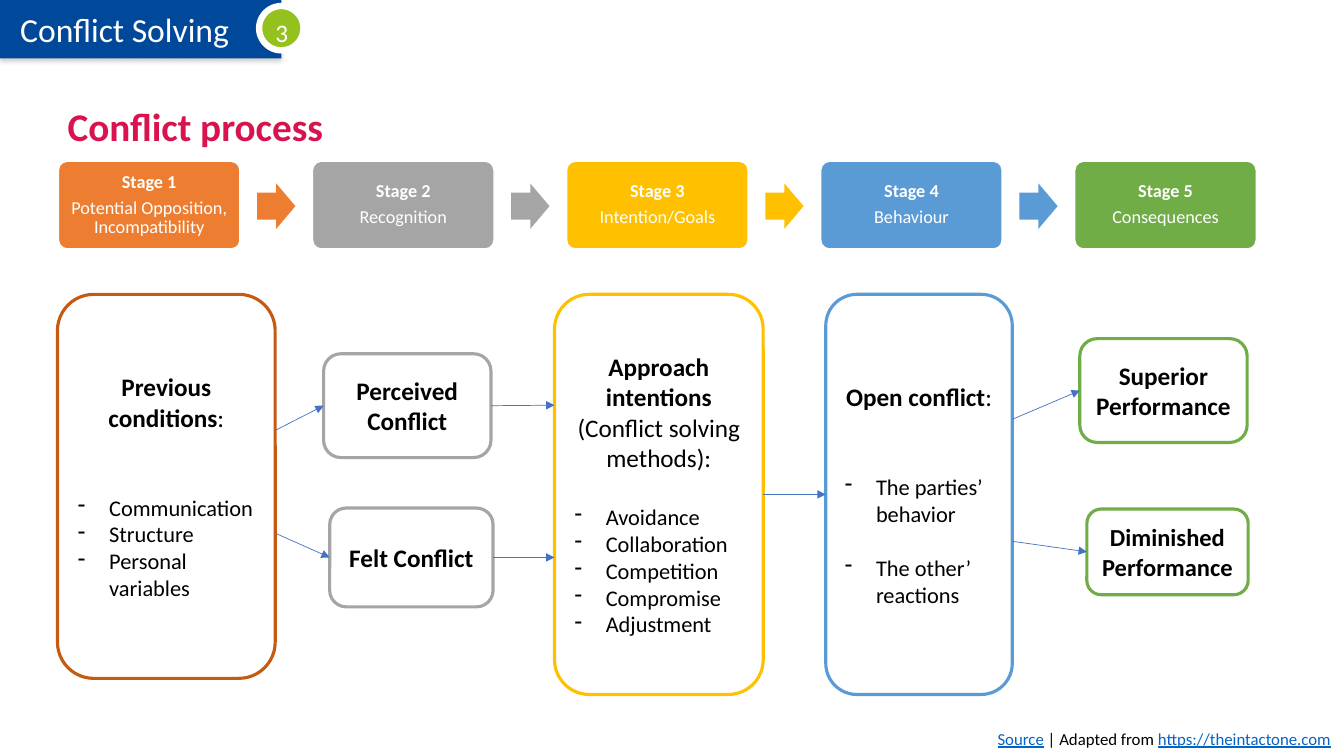
import pptx
import pptx.util
import pptx.oxml
import pptx.oxml.ns
import pptx.dml.color
import pptx.enum.shapes
import pptx.enum.text
from collections import namedtuple

RGBColor = pptx.dml.color.RGBColor
Shapes = pptx.enum.shapes.MSO_SHAPE
Align = pptx.enum.text.PP_ALIGN
Anchor = pptx.enum.text.MSO_ANCHOR
Pt = pptx.util.Pt

NAVY = RGBColor(0x00, 0x48, 0x99)
LIME = RGBColor(0x95, 0xC1, 0x1F)
CRIMSON = RGBColor(0xD8, 0x13, 0x4D)
ORANGE = RGBColor(0xED, 0x7D, 0x31)
RUST = RGBColor(0xC5, 0x5A, 0x11)
GRAY = RGBColor(0xA5, 0xA5, 0xA5)
GOLD = RGBColor(0xFF, 0xC0, 0x00)
SKY = RGBColor(0x5B, 0x9B, 0xD5)
GREEN = RGBColor(0x70, 0xAD, 0x47)
ARROW_BLUE = RGBColor(0x44, 0x72, 0xC4)
LINK_BLUE = RGBColor(0x05, 0x63, 0xC1)
WHITE = RGBColor(0xFF, 0xFF, 0xFF)
BLACK = RGBColor(0x00, 0x00, 0x00)

FONT = "Calibri"
SLIDE_WIDTH = pptx.util.Inches(13.33)
SLIDE_HEIGHT = pptx.util.Inches(7.5)
COLUMN = SLIDE_WIDTH / 1333
ROW = SLIDE_HEIGHT / 750
DRAWING = pptx.oxml.ns.nsdecls("a")

Box = namedtuple("Box", "left top width height")

STAGES = [
    ("Stage 1", "Potential Opposition, Incompatibility", ORANGE),
    ("Stage 2", "Recognition", GRAY),
    ("Stage 3", "Intention/Goals", GOLD),
    ("Stage 4", "Behaviour", SKY),
    ("Stage 5", "Consequences", GREEN),
]


def inside(box, left, top, width, height):
    return Box(box.left + left, box.top + top, width, height)


def lengths(box):
    return (round(box.left * COLUMN), round(box.top * ROW),
            round(box.width * COLUMN), round(box.height * ROW))


def add_run(paragraph, text, size, color, bold=False):
    run = paragraph.add_run()
    run.text = text
    run.font.name = FONT
    run.font.size = Pt(size)
    run.font.bold = bold
    run.font.color.rgb = color
    return run


def add_filled(slide, kind, box, fill, line=None, line_width=1):
    shape = slide.shapes.add_shape(kind, *lengths(box))
    shape.shadow.inherit = False
    shape.fill.solid()
    shape.fill.fore_color.rgb = fill
    if line is None:
        shape.line.fill.background()
    else:
        shape.line.color.rgb = line
        shape.line.width = Pt(line_width)
    shape.text_frame.word_wrap = True
    shape.text_frame.vertical_anchor = Anchor.MIDDLE
    return shape


def add_shadow(shape):
    effects = shape._element.spPr.find(pptx.oxml.ns.qn("a:effectLst"))
    effects.append(pptx.oxml.parse_xml(
        f'<a:outerShdw {DRAWING} blurRad="{Pt(3.1)}" dist="{Pt(1.8)}" dir="5400000">'
        '<a:srgbClr val="808080"><a:alpha val="35000"/></a:srgbClr></a:outerShdw>'))


def draw_header(slide, box):
    banner = add_filled(slide, Shapes.RECTANGLE, inside(box, 0, 0, 279, box.height), NAVY)
    add_shadow(banner)
    banner.text_frame.margin_left = pptx.util.Inches(0.2)
    paragraph = banner.text_frame.paragraphs[0]
    paragraph.alignment = Align.LEFT
    add_run(paragraph, "Conflict Solving", 24, WHITE)
    add_filled(slide, Shapes.OVAL, inside(box, 257, 6, 44, 44), LIME, WHITE, 4.5)
    number = slide.shapes.add_textbox(*lengths(inside(box, 262, 7, 35, 50)))
    number.text_frame.vertical_anchor = Anchor.MIDDLE
    paragraph = number.text_frame.paragraphs[0]
    paragraph.alignment = Align.CENTER
    add_run(paragraph, "3", 18, WHITE)


def draw_title(slide, box):
    title = slide.shapes.title
    title.left, title.top, title.width, title.height = lengths(box)
    title.text_frame.auto_size = pptx.enum.text.MSO_AUTO_SIZE.NONE
    title.text_frame.vertical_anchor = Anchor.MIDDLE
    paragraph = title.text_frame.paragraphs[0]
    paragraph.alignment = Align.LEFT
    paragraph.line_spacing = 0.9
    add_run(paragraph, "Conflict process", 28, CRIMSON, True)


def draw_stages(slide, box):
    pitch = 252
    for index, (name, topic, color) in enumerate(STAGES):
        left = index * pitch
        stage = add_filled(slide, Shapes.ROUNDED_RECTANGLE,
                           inside(box, left, 0, 180, box.height), color, WHITE)
        stage.adjustments[0] = 0.1
        frame = stage.text_frame
        frame.margin_left = frame.margin_right = pptx.util.Inches(0.05)
        for paragraph, text in ((frame.paragraphs[0], name), (frame.add_paragraph(), topic)):
            paragraph.alignment = Align.CENTER
            paragraph.line_spacing = 0.9
            add_run(paragraph, text, 13, WHITE, text == name)
        paragraph.space_before = Pt(4.5)
        if index < len(STAGES) - 1:
            arrow = add_filled(slide, Shapes.RIGHT_ARROW, inside(box, left + 197, 22, 38, 45), color)
            arrow.adjustments[0] = 0.6


def add_card(slide, box, color, heading, detail="", items=(), first_gap=0, gap=0, size=18):
    card = add_filled(slide, Shapes.FLOWCHART_ALTERNATE_PROCESS, box, WHITE, color, 2.25)
    paragraph = card.text_frame.paragraphs[0]
    paragraph.alignment = Align.CENTER
    add_run(paragraph, heading, size, BLACK, True)
    if detail:
        add_run(paragraph, detail, size, BLACK)
    for index, item in enumerate(items):
        paragraph = card.text_frame.add_paragraph()
        paragraph.alignment = Align.LEFT
        paragraph.space_before = Pt(gap if index else first_gap)
        properties = paragraph._p.get_or_add_pPr()
        indent = pptx.util.Inches(0.31)
        properties.set("marL", str(indent))
        properties.set("indent", str(-indent))
        properties.append(pptx.oxml.parse_xml(f'<a:buChar {DRAWING} char="-"/>'))
        add_run(paragraph, item, 16, BLACK)
    return card


def add_arrow(slide, box, start, end, source=None, target=None):
    begin_x, begin_y, _, _ = lengths(inside(box, *start, 0, 0))
    end_x, end_y, _, _ = lengths(inside(box, *end, 0, 0))
    arrow = slide.shapes.add_connector(
        pptx.enum.shapes.MSO_CONNECTOR.STRAIGHT, begin_x, begin_y, end_x, end_y)
    if source is not None:
        arrow.begin_connect(source, 3)
    if target is not None:
        arrow.end_connect(target, 1)
    arrow.line.color.rgb = ARROW_BLUE
    arrow.line.width = Pt(0.5)
    arrow.line._get_or_add_ln().append(
        pptx.oxml.parse_xml(f'<a:tailEnd {DRAWING} type="triangle"/>'))
    arrow._element.spPr.append(pptx.oxml.parse_xml(f"<a:effectLst {DRAWING}/>"))


def draw_flow(slide, box):
    add_card(slide, inside(box, 0, 0, 216, 381), RUST, "Previous conditions", ":",
             ("Communication", "Structure", "Personal variables"), 44)
    perceived = add_card(slide, inside(box, 264, 59, 166, 103), GRAY, "Perceived Conflict")
    felt = add_card(slide, inside(box, 270, 212, 162, 98), GRAY, "Felt Conflict")
    approach = add_card(
        slide, inside(box, 493, 0, 207, box.height), GOLD,
        "Approach intentions ", "(Conflict solving methods):",
        ("Avoidance", "Collaboration", "Competition", "Compromise", "Adjustment"), 22)
    behaviour = add_card(slide, inside(box, 762, 0, 185, box.height), SKY, "Open conflict", ":",
                         ("The parties’ behavior", "The other’ reactions"), 44, 19.5)
    superior = add_card(slide, inside(box, 1014, 44, 166, 103), GREEN, "Superior Performance")
    diminished = add_card(slide, inside(box, 1021, 213, 160, 85), GREEN,
                          "Diminished Performance", size=17.5)
    add_arrow(slide, box, (216, 135), (264, 110), target=perceived)
    add_arrow(slide, box, (216, 237), (270, 261), target=felt)
    add_arrow(slide, box, (430, 110), (493, 110), source=perceived)
    add_arrow(slide, box, (432, 261), (493, 261), source=felt)
    add_arrow(slide, box, (700, 198), (762, 198), approach, behaviour)
    add_arrow(slide, box, (947, 124), (1014, 96), target=superior)
    add_arrow(slide, box, (947, 245), (1021, 255), target=diminished)


def draw_source(slide, box):
    credit = slide.shapes.add_textbox(*lengths(box))
    credit.text_frame.word_wrap = True
    paragraph = credit.text_frame.paragraphs[0]
    paragraph.alignment = Align.RIGHT
    add_run(paragraph, "Source", 12, LINK_BLUE).font.underline = True
    add_run(paragraph, " | Adapted from ", 12, BLACK)
    add_run(paragraph, "https://theintactone.com", 12, LINK_BLUE).font.underline = True
    credit.text_frame.margin_right = pptx.util.Inches(0.13)


def main():
    presentation = pptx.Presentation()
    presentation.slide_width = SLIDE_WIDTH
    presentation.slide_height = SLIDE_HEIGHT
    slide = presentation.slides.add_slide(presentation.slide_layouts[5])
    draw_header(slide, Box(0, 0, 301, 58))
    draw_title(slide, Box(57, 95, 1246, 66))
    draw_stages(slide, Box(58, 160, 1195, 87))
    draw_flow(slide, Box(57, 292, 1181, 397))
    draw_source(slide, Box(374, 718, 959, 30))
    presentation.save("out.pptx")


if __name__ == "__main__":
    main()
